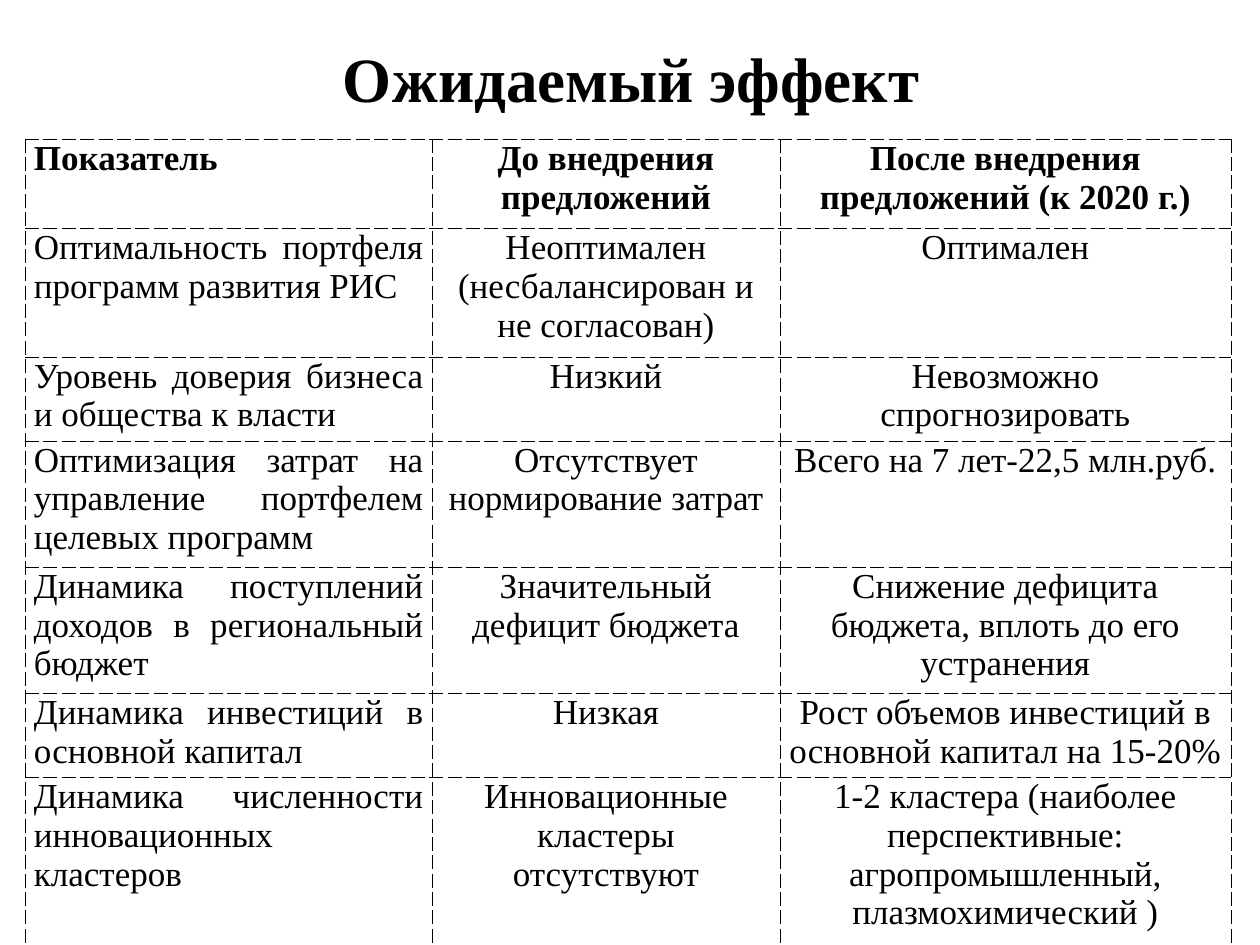
import pptx
import pptx.dml.color
import pptx.enum.text
import pptx.oxml
import pptx.oxml.ns
import pptx.util
from dataclasses import dataclass

Pt = pptx.util.Pt
ALIGN = pptx.enum.text.PP_ALIGN
ANCHOR = pptx.enum.text.MSO_ANCHOR


@dataclass(frozen=True)
class Theme:
    font: str = "Times New Roman"
    ink: str = "000000"
    paper: str = "FFFFFF"
    title_size: float = 36
    cell_size: float = 20
    border_width: float = 0.25
    cell_inset: float = 5


THEME = Theme()

COLUMN_WIDTHS = [232.5, 198.7, 257.8]
ROW_HEIGHTS = [51.1, 73.4, 46.8, 70.6, 70.6, 46.8, 93.6]
EFFECTS = [
    ("Показатель", "До внедрения предложений",
     "После внедрения предложений (к 2020 г.)"),
    ("Оптимальность портфеля программ развития РИС",
     "Неоптимален (несбалансирован и не согласован)", "Оптимален"),
    ("Уровень доверия бизнеса и общества к власти", "Низкий",
     "Невозможно спрогнозировать"),
    ("Оптимизация затрат на управление портфелем целевых программ",
     "Отсутствует нормирование затрат", "Всего на 7 лет-22,5 млн.руб."),
    ("Динамика поступлений доходов в региональный бюджет",
     "Значительный дефицит бюджета",
     "Снижение дефицита бюджета, вплоть до его устранения"),
    ("Динамика инвестиций в основной капитал", "Низкая",
     "Рост объемов инвестиций в основной капитал на 15-20%"),
    ("Динамика численности инновационных кластеров",
     "Инновационные кластеры отсутствуют",
     "1-2 кластера (наиболее перспективные: агропромышленный, "
     "плазмохимический )"),
]


def write(frame, text, size, bold, align):
    """Put one styled run into the frame's first paragraph."""
    paragraph = frame.paragraphs[0]
    paragraph.alignment = align
    run = paragraph.add_run()
    run.text = text
    run.font.name = THEME.font
    run.font.size = Pt(size)
    run.font.bold = bold
    run.font.color.rgb = pptx.dml.color.RGBColor.from_string(THEME.ink)


def add_title(slide, text, left, top, width, height):
    heading = slide.shapes.add_textbox(Pt(left), Pt(top), Pt(width), Pt(height))
    heading.text_frame.word_wrap = True
    heading.text_frame.vertical_anchor = ANCHOR.MIDDLE
    write(heading.text_frame, text, THEME.title_size, True, ALIGN.CENTER)


def add_dashed_borders(cell):
    properties = cell._tc.get_or_add_tcPr()
    for side in ("lnL", "lnR", "lnT", "lnB"):
        properties.append(pptx.oxml.parse_xml(
            f'<a:{side} {pptx.oxml.ns.nsdecls("a")} w="{Pt(THEME.border_width)}">'
            f'<a:solidFill><a:srgbClr val="{THEME.ink}"/></a:solidFill>'
            f'<a:prstDash val="sysDash"/></a:{side}>'))


def fill_cell(cell, text, is_header, align):
    cell.margin_left = cell.margin_right = Pt(THEME.cell_inset)
    cell.margin_top = cell.margin_bottom = Pt(0)
    # Borders precede the fill in the cell properties
    add_dashed_borders(cell)
    cell.fill.solid()
    cell.fill.fore_color.rgb = pptx.dml.color.RGBColor.from_string(THEME.paper)
    write(cell.text_frame, text, THEME.cell_size, is_header, align)


def add_effects_table(slide, left, top):
    effects = slide.shapes.add_table(
        len(ROW_HEIGHTS), len(COLUMN_WIDTHS), Pt(left), Pt(top),
        Pt(sum(COLUMN_WIDTHS)), Pt(sum(ROW_HEIGHTS))).table
    for column, width in zip(effects.columns, COLUMN_WIDTHS):
        column.width = Pt(width)
    for row, height in zip(effects.rows, ROW_HEIGHTS):
        row.height = Pt(height)
    for r, entries in enumerate(EFFECTS):
        for c, text in enumerate(entries):
            align = ALIGN.JUSTIFY if c == 0 else ALIGN.CENTER
            fill_cell(effects.cell(r, c), text, r == 0, align)


def main():
    deck = pptx.Presentation()
    deck.slide_width, deck.slide_height = Pt(720), Pt(540)
    slide = deck.slides.add_slide(deck.slide_layouts[6])

    # Heading
    add_title(slide, "Ожидаемый эффект", 36.7, 15.1, 648, 58.3)
    # Indicators before and after
    add_effects_table(slide, 14.4, 79.4)

    deck.save("out.pptx")


if __name__ == "__main__":
    main()
